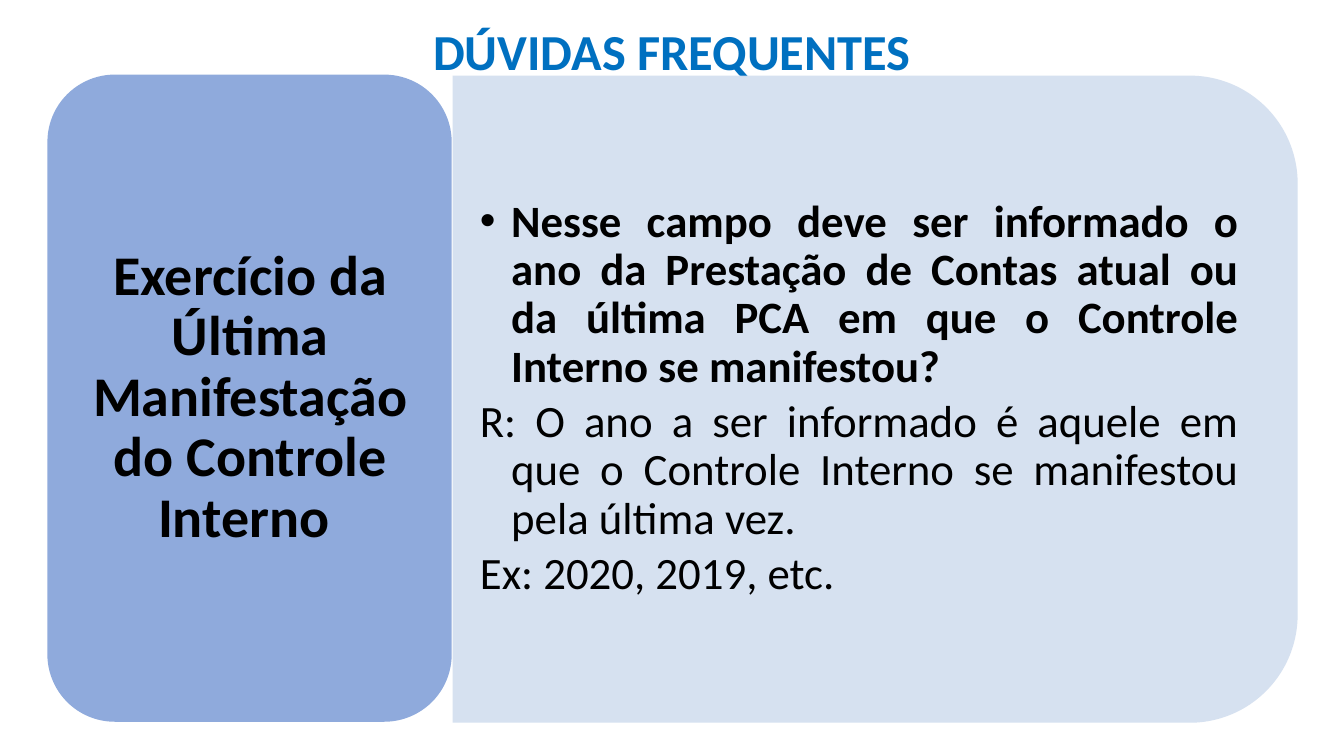
from dataclasses import dataclass

from lxml.etree import SubElement
from pptx import Presentation
from pptx.dml.color import RGBColor
from pptx.enum.shapes import MSO_SHAPE
from pptx.enum.text import MSO_ANCHOR, PP_ALIGN
from pptx.oxml.ns import qn
from pptx.slide import Slide
from pptx.util import Inches, Pt


@dataclass
class Panel:
    preset: MSO_SHAPE
    left: float
    top: float
    width: float
    height: float
    fill: str
    rotation: float = 0
    opacity: int = 100


@dataclass
class Line:
    text: str
    bold: bool = True
    bullet: bool = False


def color(value: str) -> RGBColor:
    return RGBColor.from_string(value)


def add_panel(slide: Slide, panel: Panel) -> None:
    shape = slide.shapes.add_shape(
        panel.preset, Inches(panel.left), Inches(panel.top),
        Inches(panel.width), Inches(panel.height))
    shape.rotation = panel.rotation
    shape.shadow.inherit = False
    shape.line.fill.background()
    shape.fill.solid()
    shape.fill.fore_color.rgb = color(panel.fill)
    if panel.opacity < 100:
        fill_color = shape._element.spPr.find(qn("a:solidFill"))[0]
        SubElement(fill_color, qn("a:alpha"), val=str(panel.opacity * 1000))


def add_text(slide: Slide, lines: list[Line], left: float, top: float,
             width: float, height: float, *, size: float,
             font_color: str = "000000", align: PP_ALIGN = PP_ALIGN.CENTER,
             anchor: MSO_ANCHOR = MSO_ANCHOR.MIDDLE,
             margins: tuple[float, float] = (0.1, 0.05), indent: float = 0,
             line_spacing: float = 0.9, space_after: float = 0) -> None:
    box = slide.shapes.add_textbox(
        Inches(left), Inches(top), Inches(width), Inches(height))
    frame = box.text_frame
    frame.word_wrap = True
    frame.vertical_anchor = anchor
    frame.margin_left = frame.margin_right = Inches(margins[0])
    frame.margin_top = frame.margin_bottom = Inches(margins[1])
    for index, line in enumerate(lines):
        paragraph = frame.add_paragraph() if index else frame.paragraphs[0]
        paragraph.alignment = align
        paragraph.line_spacing = line_spacing
        paragraph.space_after = Pt(space_after)
        if indent:
            paragraph.level = 1
            properties = paragraph._p.get_or_add_pPr()
            properties.set("marL", str(Inches(indent)))
            properties.set("indent", str(-Inches(indent)))
            if line.bullet:
                SubElement(properties, qn("a:buFont"), typeface="Arial")
                SubElement(properties, qn("a:buChar"), char="•")
            else:
                SubElement(properties, qn("a:buNone"))
        run = paragraph.add_run()
        run.text = line.text
        run.font.name = "Calibri"
        run.font.size = Pt(size)
        run.font.bold = line.bold
        run.font.color.rgb = color(font_color)


ANSWER_PANEL = Panel(MSO_SHAPE.ROUND_2_SAME_RECTANGLE, 5.47, -0.23, 6.42, 8.38,
                     "D2DEEF", rotation=90, opacity=90)
TOPIC_PANEL = Panel(MSO_SHAPE.ROUNDED_RECTANGLE, 0.47, 0.74, 4.01, 6.42, "8FAADC")

QUESTION_AND_ANSWER = [
    Line("Nesse campo deve ser informado o ano da Prestação de Contas atual "
         "ou da última PCA em que o Controle Interno se manifestou?", bullet=True),
    Line("R: O ano a ser informado é aquele em que o Controle Interno se "
         "manifestou pela última vez.", bold=False),
    Line("Ex: 2020, 2019, etc.", bold=False),
]


def main() -> None:
    presentation = Presentation()
    presentation.slide_width = Inches(13.33)
    presentation.slide_height = Inches(7.5)
    slide = presentation.slides.add_slide(presentation.slide_layouts[6])

    # Title
    add_text(slide, [Line("DÚVIDAS FREQUENTES")], 0.72, 0.15, 11.89, 0.71,
             size=36, font_color="0070C0", anchor=MSO_ANCHOR.TOP, line_spacing=1)

    # Question and answer
    add_panel(slide, ANSWER_PANEL)
    add_text(slide, QUESTION_AND_ANSWER, 4.49, 1.06, 8.07, 5.79, size=32,
             align=PP_ALIGN.JUSTIFY, margins=(0.27, 0.14), indent=0.31,
             space_after=4.8)

    # Topic
    add_panel(slide, TOPIC_PANEL)
    add_text(slide, [Line("Exercício da Última Manifestação do Controle Interno ")],
             0.67, 0.94, 3.62, 6.02, size=40, margins=(0.17, 0.08))

    presentation.save("out.pptx")


if __name__ == "__main__":
    main()
